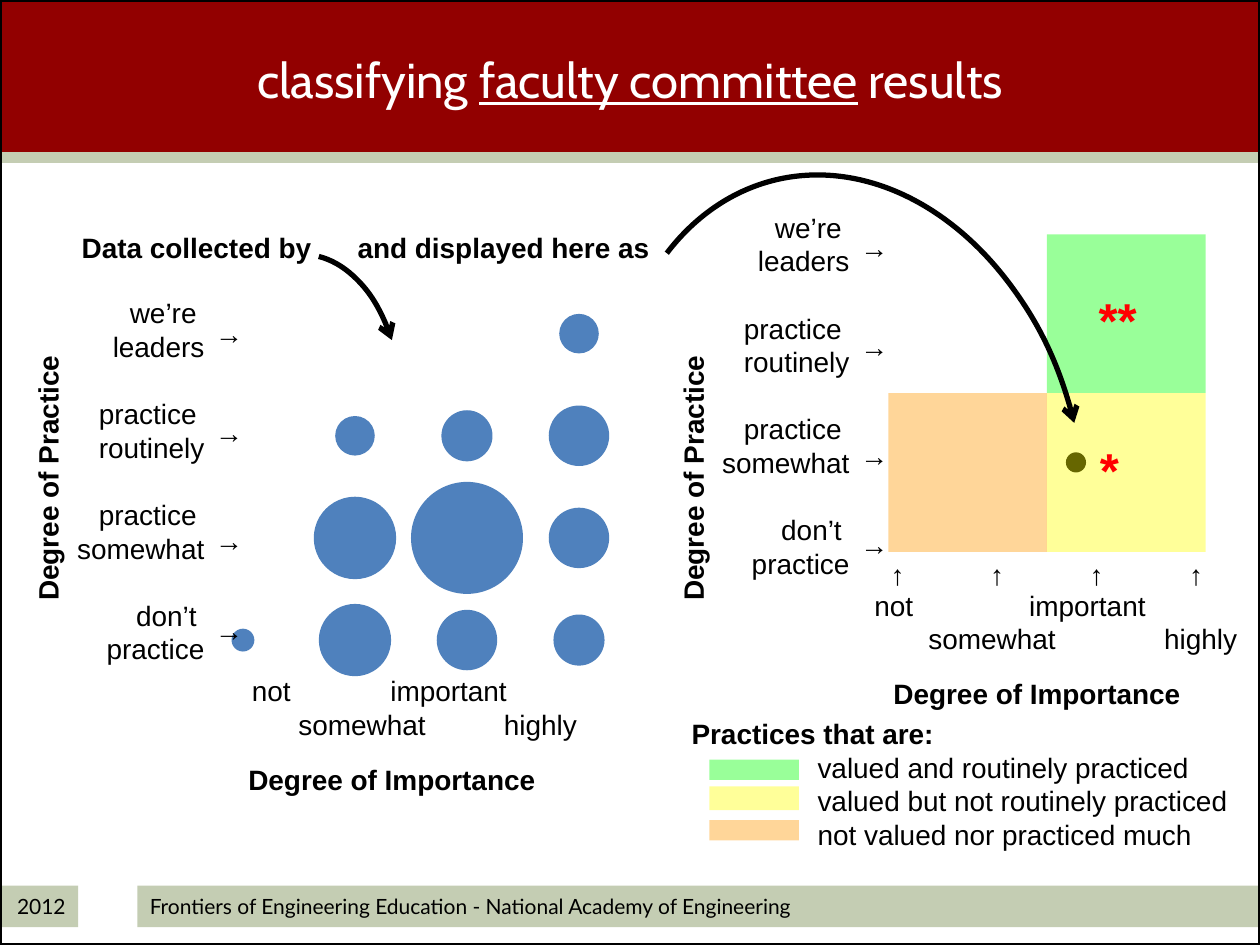
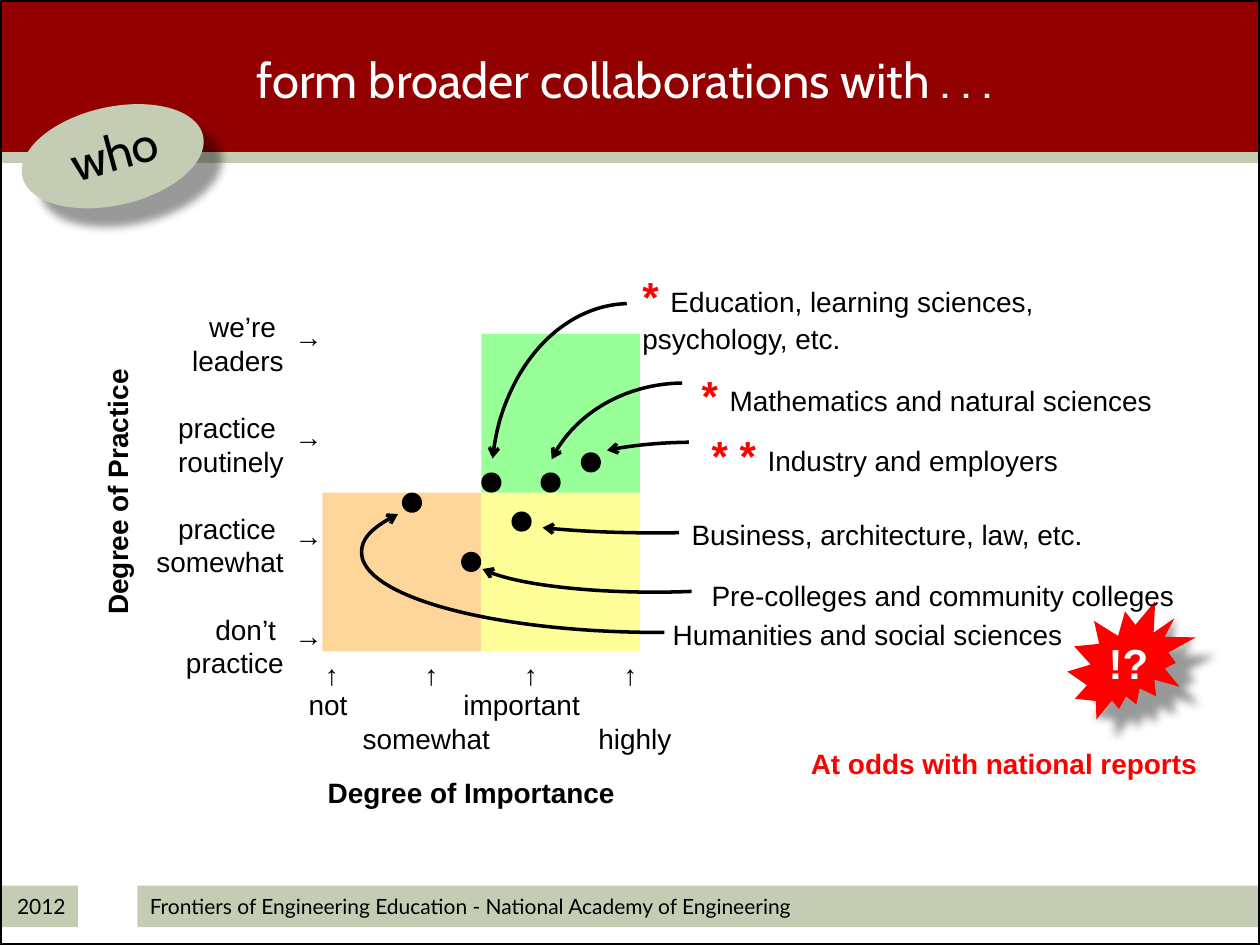
"""Build two slides on faculty committee results and broader collaborations."""
from typing import NamedTuple

from lxml.etree import SubElement
from pptx import Presentation
from pptx.chart.data import BubbleChartData
from pptx.dml.color import RGBColor
from pptx.enum.chart import XL_CHART_TYPE
from pptx.enum.shapes import MSO_CONNECTOR, MSO_SHAPE
from pptx.enum.text import MSO_ANCHOR, PP_ALIGN
from pptx.oxml.ns import qn
from pptx.util import Inches, Pt

COLORS = {
    "maroon": "920000", "sage": "C4CDB3", "black": "000000", "white": "FFFFFF",
    "red": "FF0000", "green": "00FF00", "yellow": "FFFF00", "orange": "FF9900",
    "blue": "4F81BD",
}
SLIDE_WIDTH, SLIDE_HEIGHT = 10, 7.5
BAND_HEIGHT = 1.25
QUADRANT = 1.26
DOT = 0.16
TICK_STEP = 0.79
UNEVEN_TICKS = (0, 0.79, 1.65, 2.36)
EVEN_TICKS = tuple(TICK_STEP * step for step in range(4))
PRACTICE_LEVELS = (("we’re ", "leaders"), ("practice ", "routinely"),
                   ("practice ", "somewhat"), ("don’t ", "practice"))


class Box(NamedTuple):
    left: float
    top: float
    width: float
    height: float


class Run(NamedTuple):
    text: str
    size: int = 16
    color: str = "black"
    bold: bool = False
    font: str = "Arial"
    underline: bool = False


class Arc(NamedTuple):
    box: Box
    start: float
    end: float
    flip: str = ""
    rotation: float = 0
    weight: float = 2


class Label(NamedTuple):
    box: Box
    stars: str
    text: str
    filled: bool = False


class Matrix(NamedTuple):
    left: float
    top: float
    tick_top: float
    ticks: tuple
    practice_box: Box


ARCS = (
    Arc(Box(3.9, 2.41, 2.2, 2.84), 162.608, 210.058, "H"),
    Arc(Box(4.29, 3.04, 2.28, 1.97), 162.583, 204.082, "H"),
    Arc(Box(2.87, 3.75, 4.73, 1.27), 159.903, 5.004, "HV"),
    Arc(Box(3.74, 3.83, 2.91, 0.4), 133.795, 209.933, "HV"),
    Arc(Box(4.37, 3.51, 2.28, 0.63), 162.583, 204.082, "H"),
    Arc(Box(3.74, 4.14, 2.91, 0.56), 133.795, 213.573, "HV"),
)
DOTS = ((4.29, 3.75), (3.19, 3.91), (3.82, 3.75), (4.06, 4.06), (4.61, 3.59), (3.66, 4.38))
COLLABORATORS = (
    Label(Box(5.24, 4.85, 3.78, 0.37), "", "Humanities and social sciences"),
    Label(Box(5.47, 2.88, 3.78, 0.77), "* ", "Mathematics and natural sciences", True),
    Label(Box(5, 2.1, 3.39, 0.77), "* ", "Education, learning sciences, psychology, etc."),
    Label(Box(5.39, 4.06, 3.78, 0.37), "", "Business, architecture, law, etc.", True),
    Label(Box(5.55, 3.36, 3.31, 0.51), "* * ", "Industry and employers", True),
    Label(Box(5.55, 4.54, 4.13, 0.37), "", "Pre-colleges and community colleges"),
)
BUBBLES = ((1, 25, 1), (2, 25, 10), (2, 50, 13), (2, 75, 3), (3, 25, 7), (3, 50, 24),
           (3, 75, 5), (4, 25, 5), (4, 50, 7), (4, 75, 7), (4, 100, 3))
LEGEND = (("green", 6.03, 0.16, "valued and routinely practiced"),
          ("yellow", 6.24, 0.19, "valued but not routinely practiced"),
          ("orange", 6.51, 0.16, "not valued nor practiced much"))


def rgb(name: str) -> RGBColor:
    return RGBColor.from_string(COLORS[name])


def inches(box: Box) -> tuple:
    return tuple(Inches(length) for length in box)


def write(frame, lines: list, align=PP_ALIGN.LEFT, tabs: tuple = ()) -> None:
    frame.word_wrap = True
    for index, line in enumerate(lines):
        paragraph = frame.paragraphs[0] if index == 0 else frame.add_paragraph()
        paragraph.alignment = align
        if index < len(tabs):
            stops = SubElement(paragraph._p.get_or_add_pPr(), qn("a:tabLst"))
            for stop in tabs[index]:
                SubElement(stops, qn("a:tab"), pos=str(Inches(stop)), algn="l")
        for part in line:
            run = paragraph.add_run()
            run.text = part.text
            run.font.name = part.font
            run.font.size = Pt(part.size)
            run.font.bold = part.bold
            run.font.underline = part.underline
            run.font.color.rgb = rgb(part.color)


def add_text(slide, box: Box, *lines: list, align=PP_ALIGN.LEFT, tabs: tuple = (),
             rotation: float = 0, filled: bool = False):
    caption = slide.shapes.add_textbox(*inches(box))
    caption.rotation = rotation
    if filled:
        caption.fill.solid()
        caption.fill.fore_color.rgb = rgb("white")
    write(caption.text_frame, list(lines), align, tabs)
    return caption


def add_block(slide, box: Box, color: str, kind=MSO_SHAPE.RECTANGLE, alpha: int = 100,
              rotation: float = 0, shadow: bool = False):
    block = slide.shapes.add_shape(kind, *inches(box))
    block.shadow.inherit = False
    block.rotation = rotation
    block.line.fill.background()
    block.fill.solid()
    block.fill.fore_color.rgb = rgb(color)
    if alpha < 100:
        tint = block._element.spPr.find(f".//{qn('a:srgbClr')}")
        SubElement(tint, qn("a:alpha"), val=str(alpha * 1000))
    if shadow:
        effects = block._element.spPr.find(qn("a:effectLst"))
        cast = SubElement(effects, qn("a:outerShdw"), blurRad=str(Pt(5)), dist=str(Pt(15)),
                          dir=str(45 * 60000), algn="ctr", rotWithShape="0")
        shade = SubElement(cast, qn("a:srgbClr"), val=COLORS["black"])
        SubElement(shade, qn("a:alpha"), val="40000")
    return block


def add_dot(slide, left: float, top: float) -> None:
    add_block(slide, Box(left, top, DOT, DOT), "black", MSO_SHAPE.OVAL)


def add_arc(slide, arc: Arc) -> None:
    curve = slide.shapes.add_shape(MSO_SHAPE.ARC, *inches(arc.box))
    curve.shadow.inherit = False
    curve.rotation = arc.rotation
    curve.adjustments[0], curve.adjustments[1] = arc.start, arc.end
    curve.fill.background()
    curve.line.color.rgb = rgb("black")
    curve.line.width = Pt(arc.weight)
    SubElement(curve.line._get_or_add_ln(), qn("a:tailEnd"), type="arrow")
    for axis in arc.flip:
        curve._element.spPr.find(qn("a:xfrm")).set(f"flip{axis}", "1")


def add_slide(deck, *title: Run):
    slide = deck.slides.add_slide(deck.slide_layouts[6])
    band = Box(0, 0, SLIDE_WIDTH, BAND_HEIGHT)
    add_block(slide, band, "maroon")
    rule = slide.shapes.add_connector(MSO_CONNECTOR.STRAIGHT, 0, Inches(BAND_HEIGHT),
                                      Inches(SLIDE_WIDTH), Inches(BAND_HEIGHT))
    rule.line.color.rgb = rgb("sage")
    rule.line.width = Pt(6)
    SubElement(rule._element.spPr, qn("a:effectLst"))
    footers = (
        (1.09, 8.91, "Frontiers of Engineering Education - National Academy of Engineering",
         PP_ALIGN.LEFT),
        (0, 0.62, "2012", PP_ALIGN.RIGHT),
    )
    for left, width, text, align in footers:
        footer = add_block(slide, Box(left, 7.03, width, 0.33), "sage")
        write(footer.text_frame, [[Run(text, 12, font="Lato")]], align)
    frame = add_block(slide, Box(0, 0, SLIDE_WIDTH, SLIDE_HEIGHT), "white")
    frame.fill.background()
    frame.line.color.rgb = rgb("black")
    frame.line.width = Pt(2.25)
    heading = add_text(slide, band, list(title), align=PP_ALIGN.CENTER)
    heading.text_frame.vertical_anchor = MSO_ANCHOR.MIDDLE
    return slide


def title_run(text: str, underline: bool = False) -> Run:
    return Run(text, 28, "white", font="Cabin", underline=underline)


def add_practice_axis(slide, left: float, top: float, tick_top: float, ticks: tuple,
                      title_box: Box) -> None:
    lines = [[Run(word)] for level in PRACTICE_LEVELS for word in level]
    levels = add_text(slide, Box(left, top, 1.29, 3.33), *lines, align=PP_ALIGN.RIGHT)
    for paragraph in levels.text_frame.paragraphs[2::2]:
        paragraph.space_before = Pt(19.2)
    for tick in ticks:
        add_text(slide, Box(left + 1.18, tick_top + tick, 0.39, 0.37), [Run("→")])
    add_text(slide, title_box, [Run("Degree of Practice", bold=True)],
             align=PP_ALIGN.CENTER, rotation=270, filled=True)


def add_importance_axis(slide, left: float, top: float, title_left: float,
                        tabs: tuple) -> None:
    add_text(slide, Box(left, top, 3.58, 0.64), [Run("\tnot\timportant")],
             [Run("\tsomewhat\thighly")], tabs=tabs)
    add_text(slide, Box(title_left, top + 0.7, 2.52, 0.37),
             [Run("Degree of Importance", bold=True)], align=PP_ALIGN.CENTER, filled=True)


def add_matrix(slide, matrix: Matrix) -> None:
    left, top = matrix.left, matrix.top
    for column, row, color in ((1, 1, "yellow"), (1, 0, "green"), (0, 1, "orange")):
        add_block(slide, Box(left + column * QUADRANT, top + row * QUADRANT,
                             QUADRANT, QUADRANT), color, alpha=40)
    add_practice_axis(slide, left - 1.5, top - 0.24, matrix.tick_top, matrix.ticks,
                      matrix.practice_box)
    for tick in EVEN_TICKS:
        add_text(slide, Box(left - 0.08 + tick, top + 2.52, 0.34, 0.37), [Run("↑")])
    add_importance_axis(slide, left - 0.63, top + 2.76, left - 0.08,
                        ((0.42, 1.65), (0.85, 2.72)))


def add_bubbles(slide) -> None:
    data = BubbleChartData()
    practices = data.add_series("Series 1")
    for importance, practice, size in BUBBLES:
        practices.add_data_point(importance, practice, size)
    chart = slide.shapes.add_chart(XL_CHART_TYPE.BUBBLE,
                                   *inches(Box(0.98, 0.02, 4.27, 7.48)), data).chart
    chart.has_legend = chart.has_title = False
    chart.font.name, chart.font.size = "Calibri", Pt(10)
    chart.font.color.rgb = rgb("black")
    for axis, low, high, unit in ((chart.category_axis, 0.5, 4.5, 1),
                                  (chart.value_axis, 0, 125, 25)):
        axis.minimum_scale, axis.maximum_scale, axis.major_unit = low, high, unit
        axis.has_major_gridlines = False
        axis.visible = False
    fill = chart.plots[0].series[0].format.fill
    fill.solid()
    fill.fore_color.rgb = rgb("blue")
    area = chart._chartSpace.find(f".//{qn('c:plotArea')}")
    layout = area.find(qn("c:layout"))
    if layout is None:
        layout = SubElement(area, qn("c:layout"))
        area.insert(0, layout)
    manual = SubElement(layout, qn("c:manualLayout"))
    for tag, value in (("layoutTarget", "inner"), ("xMode", "edge"), ("yMode", "edge"),
                       ("x", "0.118"), ("y", "0.243"), ("w", "0.833"), ("h", "0.542")):
        SubElement(manual, qn(f"c:{tag}"), val=value)


def build_results(deck) -> None:
    slide = add_slide(deck, title_run("classifying "), title_run("faculty committee", True),
                      title_run(" results"))
    add_bubbles(slide)
    add_practice_axis(slide, 0.43, 2.3, 2.46, UNEVEN_TICKS, Box(-0.88, 3.61, 2.52, 0.37))
    add_importance_axis(slide, 1.3, 5.3, 1.85, ((0.6, 1.7), (0.97, 2.6)))
    add_dot(slide, 8.46, 3.59)
    add_matrix(slide, Matrix(7.05, 1.86, 1.78, UNEVEN_TICKS, Box(4.24, 3.61, 2.52, 0.37)))
    add_arc(slide, Arc(Box(4.87, 1.36, 3.71, 4.88), 146.904, 215.797, rotation=346.5, weight=3))
    add_text(slide, Box(5.39, 5.64, 4.55, 1.2), [Run("Practices that are:", bold=True)],
             *[[Run(f"\t{meaning}")] for *_, meaning in LEGEND], tabs=((1,),) * 4)
    for color, top, height, _ in LEGEND:
        add_block(slide, Box(5.63, top, 0.71, height), color, alpha=40)
    add_text(slide, Box(0.55, 1.78, 4.84, 0.37),
             [Run("Data collected by\tand displayed here as", bold=True)], tabs=((2.19,),))
    add_arc(slide, Arc(Box(1.61, 2.02, 1.59, 2.52), 165.45, 192.335, weight=3))
    for stars, left, top in (("**", 8.62, 2.25), ("*", 8.63, 3.44)):
        add_text(slide, Box(left, top, 1.25, 0.57), [Run(stars, 28, "red", True)])


def build_collaborations(deck) -> None:
    slide = add_slide(deck, title_run("form broader collaborations with . . . "))
    add_matrix(slide, Matrix(2.56, 2.65, 2.49, EVEN_TICKS, Box(-0.33, 3.72, 2.52, 0.37)))
    add_block(slide, Box(0.16, 0.85, 1.47, 0.78), "sage", MSO_SHAPE.OVAL,
              rotation=347.2, shadow=True)
    add_text(slide, Box(0.34, 0.92, 1.13, 0.57), [Run("who", 28, font="Cabin")],
             align=PP_ALIGN.CENTER, rotation=344.8)
    add_block(slide, Box(8.47, 4.77, 1.02, 0.94), "red", MSO_SHAPE.EXPLOSION2, shadow=True)
    add_text(slide, Box(8.7, 5.01, 0.55, 0.51), [Run("!?", 24, "white", True)])
    for arc in ARCS:
        add_arc(slide, arc)
    for left, top in DOTS:
        add_dot(slide, left, top)
    for label in COLLABORATORS:
        stars = [Run(label.stars, 24, "red", True)] if label.stars else []
        add_text(slide, label.box, stars + [Run(label.text)], filled=label.filled)
    add_text(slide, Box(5.47, 5.88, 4.13, 0.37),
             [Run("At odds with national reports", 16, "red", True)], align=PP_ALIGN.RIGHT)


def main() -> None:
    deck = Presentation()
    deck.slide_width, deck.slide_height = Inches(SLIDE_WIDTH), Inches(SLIDE_HEIGHT)
    build_results(deck)
    build_collaborations(deck)
    deck.save("out.pptx")


if __name__ == "__main__":
    main()
